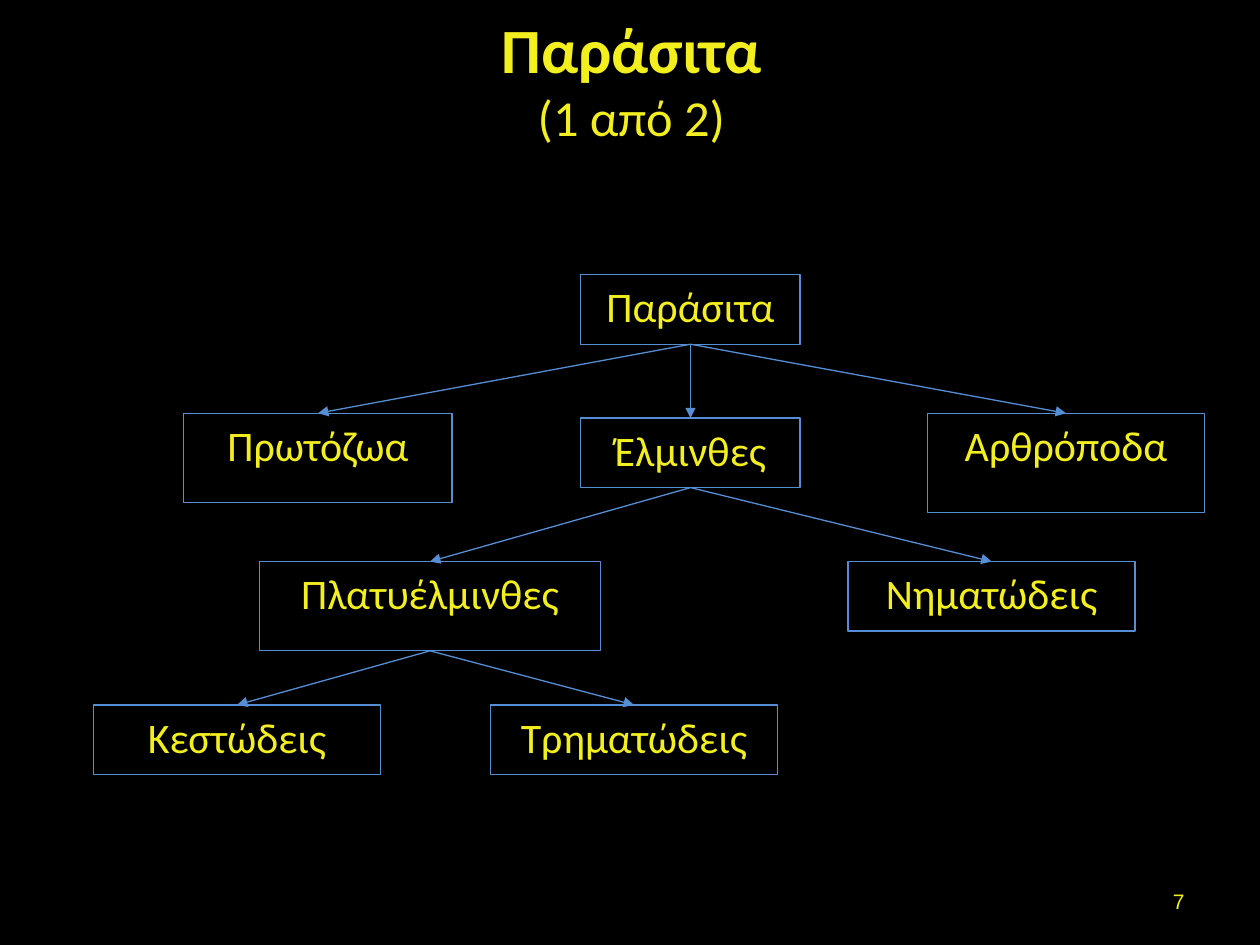
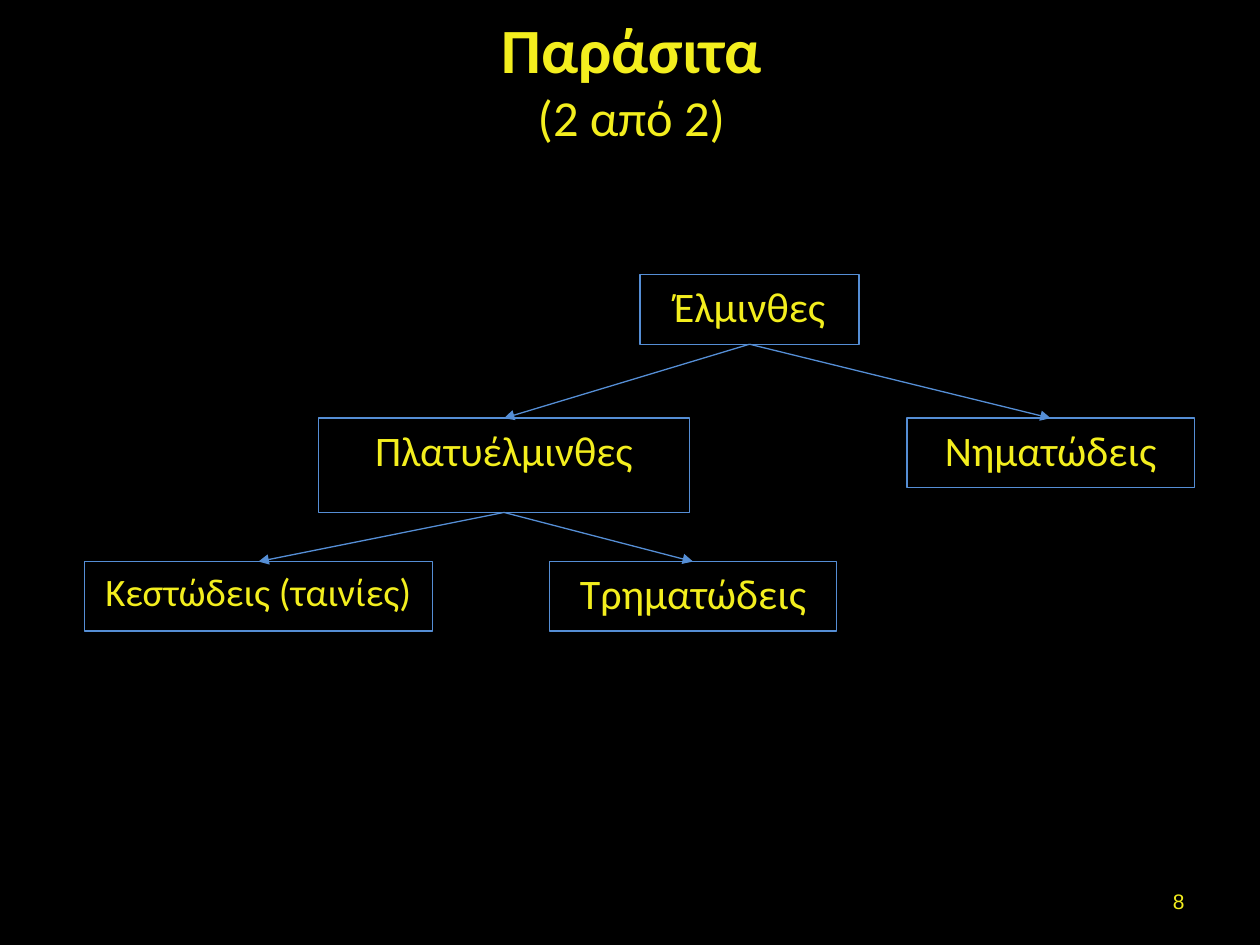
"""Build two slides that show the classification of parasites as trees."""
from copy import deepcopy
from dataclasses import dataclass

from lxml import etree
from pptx import Presentation
from pptx.dml.color import RGBColor
from pptx.enum.shapes import MSO_CONNECTOR, MSO_SHAPE
from pptx.enum.text import MSO_ANCHOR, MSO_AUTO_SIZE, PP_ALIGN
from pptx.oxml.ns import qn
from pptx.util import Cm, Pt

RECTANGLE = MSO_SHAPE.RECTANGLE
STRAIGHT = MSO_CONNECTOR.STRAIGHT
TOP, MIDDLE = MSO_ANCHOR.TOP, MSO_ANCHOR.MIDDLE
CENTER, RIGHT = PP_ALIGN.CENTER, PP_ALIGN.RIGHT
NO_AUTOFIT = MSO_AUTO_SIZE.NONE
TITLE_ONLY = 5
TOP_SIDE, BOTTOM_SIDE = 0, 2


@dataclass(frozen=True)
class Theme:
    background: RGBColor = RGBColor(0x00, 0x00, 0x00)
    text: RGBColor = RGBColor(0xF3, 0xEE, 0x1E)
    line: RGBColor = RGBColor(0x55, 0x8E, 0xD5)
    font: str = "Calibri"
    number_font: str = "Arial"
    title_size: float = 36
    part_size: float = 28.8
    taxon_size: float = 24
    number_size: float = 12
    line_width: float = 0.75


@dataclass(frozen=True)
class Taxon:
    name: str
    parent: str
    row: int
    center: float
    width: float
    height: float = 1.4
    lift: float = 0
    size: float = Theme.taxon_size


THEME = Theme()
TITLE = "Παράσιτα"
FIRST_NUMBER = 7
FIRST_ROW, ROW_STEP = 5.54, 2.89
TREES = [
    [
        Taxon("Παράσιτα", "", 0, 13.92, 4.42),
        Taxon("Πρωτόζωα", "Παράσιτα", 1, 6.41, 5.41, 1.8, lift=0.1),
        Taxon("Αρθρόποδα", "Παράσιτα", 1, 21.49, 5.59, 2, lift=0.1),
        Taxon("Έλμινθες", "Παράσιτα", 1, 13.92, 4.42),
        Taxon("Πλατυέλμινθες", "Έλμινθες", 2, 8.67, 6.88, 1.8),
        Taxon("Νηματώδεις", "Έλμινθες", 2, 19.99, 5.79),
        Taxon("Κεστώδεις", "Πλατυέλμινθες", 3, 4.78, 5.79),
        Taxon("Τρηματώδεις", "Πλατυέλμινθες", 3, 12.78, 5.79),
    ],
    [
        Taxon("Έλμινθες", "", 0, 15.11, 4.42),
        Taxon("Νηματώδεις", "Έλμινθες", 1, 21.18, 5.79),
        Taxon("Πλατυέλμινθες", "Έλμινθες", 1, 10.16, 7.47, 1.9),
        Taxon("Κεστώδεις (ταινίες)", "Πλατυέλμινθες", 2, 5.21, 7.01, size=22.2),
        Taxon("Τρηματώδεις", "Πλατυέλμινθες", 2, 13.97, 5.79),
    ],
]


def format_run(run, size, font=THEME.font, bold=False):
    """Give a run its theme font and colour."""
    run.font.name = font
    run.font.size = Pt(size)
    run.font.bold = bold
    run.font.color.rgb = THEME.text


def write(frame, text, align, anchor):
    """Put one paragraph in a frame and return it."""
    frame.text = text
    frame.word_wrap = True
    frame.auto_size = NO_AUTOFIT
    frame.vertical_anchor = anchor
    paragraph = frame.paragraphs[0]
    paragraph.alignment = align
    return paragraph


def set_line(line):
    """Apply the shared line style."""
    line.color.rgb = THEME.line
    line.width = Pt(THEME.line_width)


def add_title(slide, part):
    """Fill the title placeholder with the heading and its part."""
    title = slide.shapes.title
    title.left, title.top, title.width, title.height = Cm(1.3), Cm(0.33), Cm(22.86), Cm(2.51)
    paragraph = write(title.text_frame, f"{TITLE}\v({part} από {len(TREES)})", CENTER, MIDDLE)
    heading, part_label = paragraph.runs
    format_run(heading, THEME.title_size, bold=True)
    format_run(part_label, THEME.part_size)
    line_break = paragraph._p.find(qn("a:br"))
    line_break.append(deepcopy(heading._r.rPr))


def add_taxon(slide, taxon):
    """Draw the box of one taxon."""
    top = FIRST_ROW + taxon.row * ROW_STEP - taxon.lift
    box = slide.shapes.add_shape(
        RECTANGLE, Cm(taxon.center - taxon.width / 2), Cm(top), Cm(taxon.width), Cm(taxon.height)
    )
    box.shadow.inherit = False
    box.fill.background()
    set_line(box.line)
    paragraph = write(box.text_frame, taxon.name, CENTER, TOP)
    format_run(paragraph.runs[0], taxon.size)
    return box


def add_branch(slide, parent_box, child_box):
    """Draw an arrow from a parent down to its child."""
    branch = slide.shapes.add_connector(STRAIGHT, 0, 0, 0, 0)
    branch.begin_connect(parent_box, BOTTOM_SIDE)
    branch.end_connect(child_box, TOP_SIDE)
    set_line(branch.line)
    etree.SubElement(branch.line._get_or_add_ln(), qn("a:tailEnd"), type="triangle")
    etree.SubElement(branch._element.spPr, qn("a:effectLst"))


def add_tree(slide, tree):
    """Draw all boxes of a tree and the arrows between them."""
    boxes = {}
    for taxon in tree:
        boxes[taxon.name] = add_taxon(slide, taxon)
        if taxon.parent:
            add_branch(slide, boxes[taxon.parent], boxes[taxon.name])


def add_number(slide, number):
    """Write the slide number at the lower right."""
    footer = slide.shapes.add_textbox(Cm(18.21), Cm(17.65), Cm(5.92), Cm(1.02))
    paragraph = write(footer.text_frame, str(number), RIGHT, MIDDLE)
    format_run(paragraph.runs[0], THEME.number_size, THEME.number_font)


def main():
    """Build and save the presentation."""
    presentation = Presentation()
    presentation.slide_width, presentation.slide_height = Cm(25.4), Cm(19.05)
    background = presentation.slide_master.background.fill
    background.solid()
    background.fore_color.rgb = THEME.background
    for index, tree in enumerate(TREES):
        slide = presentation.slides.add_slide(presentation.slide_layouts[TITLE_ONLY])
        add_title(slide, index + 1)
        add_tree(slide, tree)
        add_number(slide, FIRST_NUMBER + index)
    presentation.save("out.pptx")


if __name__ == "__main__":
    main()
